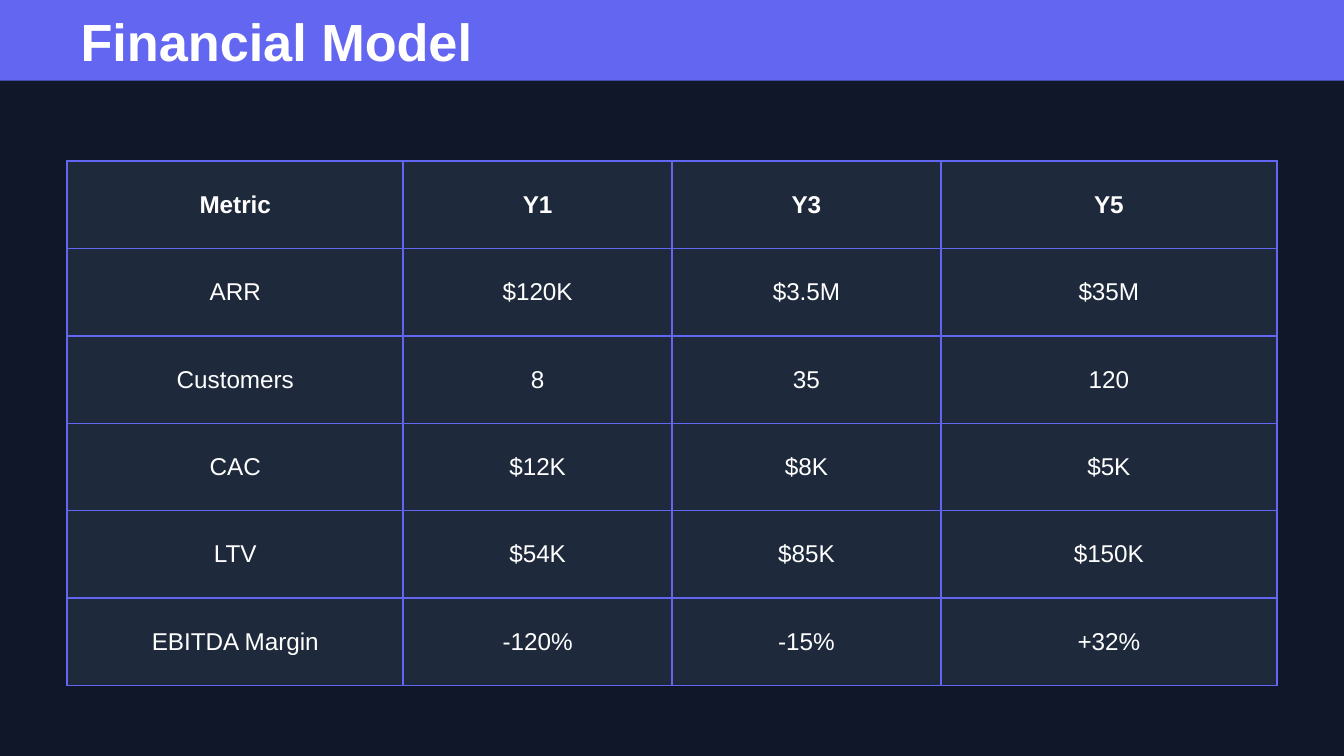
from lxml import etree
from pptx import Presentation
from pptx import util as u
from pptx.dml import color
from pptx.enum import shapes, text
from pptx.oxml import ns

TITLE = "Financial Model"
ROWS = [
    ("Metric", "Y1", "Y3", "Y5"),
    ("ARR", "$120K", "$3.5M", "$35M"),
    ("Customers", "8", "35", "120"),
    ("CAC", "$12K", "$8K", "$5K"),
    ("LTV", "$54K", "$85K", "$150K"),
    ("EBITDA Margin", "-120%", "-15%", "+32%"),
]
SLIDE_WIDTH = 10
COLUMN_WIDTHS = (2.5, 2, 2, 2.5)
ROW_HEIGHT = 0.65
BACKGROUND, ACCENT, PANEL, WHITE = "0F1729", "6366F1", "1E293B", "FFFFFF"


def set_fill(fill, hex_color):
    fill.solid()
    fill.fore_color.rgb = color.RGBColor.from_string(hex_color)


def set_font(font, size, bold):
    font.name, font.size, font.bold = "Arial", u.Pt(size), bold
    set_fill(font.fill, WHITE)


def add_borders(cell, hex_color, points):
    properties = cell._tc.get_or_add_tcPr()
    for side in ("lnL", "lnR", "lnT", "lnB"):
        line = etree.SubElement(properties, ns.qn(f"a:{side}"), w=str(u.Pt(points)))
        solid = etree.SubElement(line, ns.qn("a:solidFill"))
        etree.SubElement(solid, ns.qn("a:srgbClr"), val=hex_color)


def add_header(slide):
    band = slide.shapes.add_shape(
        shapes.MSO_SHAPE.RECTANGLE, 0, 0, u.Inches(SLIDE_WIDTH), u.Inches(0.6))
    band.shadow.inherit = False
    set_fill(band.fill, ACCENT)
    band.line.fill.background()

    title = slide.shapes.title
    title.element.addprevious(band.element)
    title.left, title.top = u.Inches(0.5), u.Inches(0.08)
    title.width, title.height = u.Inches(4), u.Inches(0.45)
    frame = title.text_frame
    frame.text = TITLE
    frame.auto_size = text.MSO_AUTO_SIZE.NONE
    frame.vertical_anchor = text.MSO_ANCHOR.MIDDLE
    paragraph = frame.paragraphs[0]
    paragraph.alignment = text.PP_ALIGN.LEFT
    set_font(paragraph.font, 28, True)


def add_metrics_table(slide):
    table = slide.shapes.add_table(
        len(ROWS), len(COLUMN_WIDTHS), u.Inches(0.5), u.Inches(1.2),
        u.Inches(sum(COLUMN_WIDTHS)), u.Inches(ROW_HEIGHT * len(ROWS))).table
    table.horz_banding = False
    for column, width in zip(table.columns, COLUMN_WIDTHS):
        column.width = u.Inches(width)
    for row_index, values in enumerate(ROWS):
        table.rows[row_index].height = u.Inches(ROW_HEIGHT)
        for column_index, value in enumerate(values):
            cell = table.cell(row_index, column_index)
            cell.text = value
            cell.vertical_anchor = text.MSO_ANCHOR.MIDDLE
            add_borders(cell, ACCENT, 1)
            set_fill(cell.fill, PANEL)
            paragraph = cell.text_frame.paragraphs[0]
            paragraph.alignment = text.PP_ALIGN.CENTER
            set_font(paragraph.font, 13, row_index == 0)


def main():
    presentation = Presentation()
    presentation.slide_width = u.Inches(SLIDE_WIDTH)
    presentation.slide_height = u.Inches(SLIDE_WIDTH * 9 / 16)
    slide = presentation.slides.add_slide(presentation.slide_layouts[5])
    set_fill(slide.background.fill, BACKGROUND)
    add_header(slide)
    add_metrics_table(slide)
    presentation.save("out.pptx")


if __name__ == "__main__":
    main()
